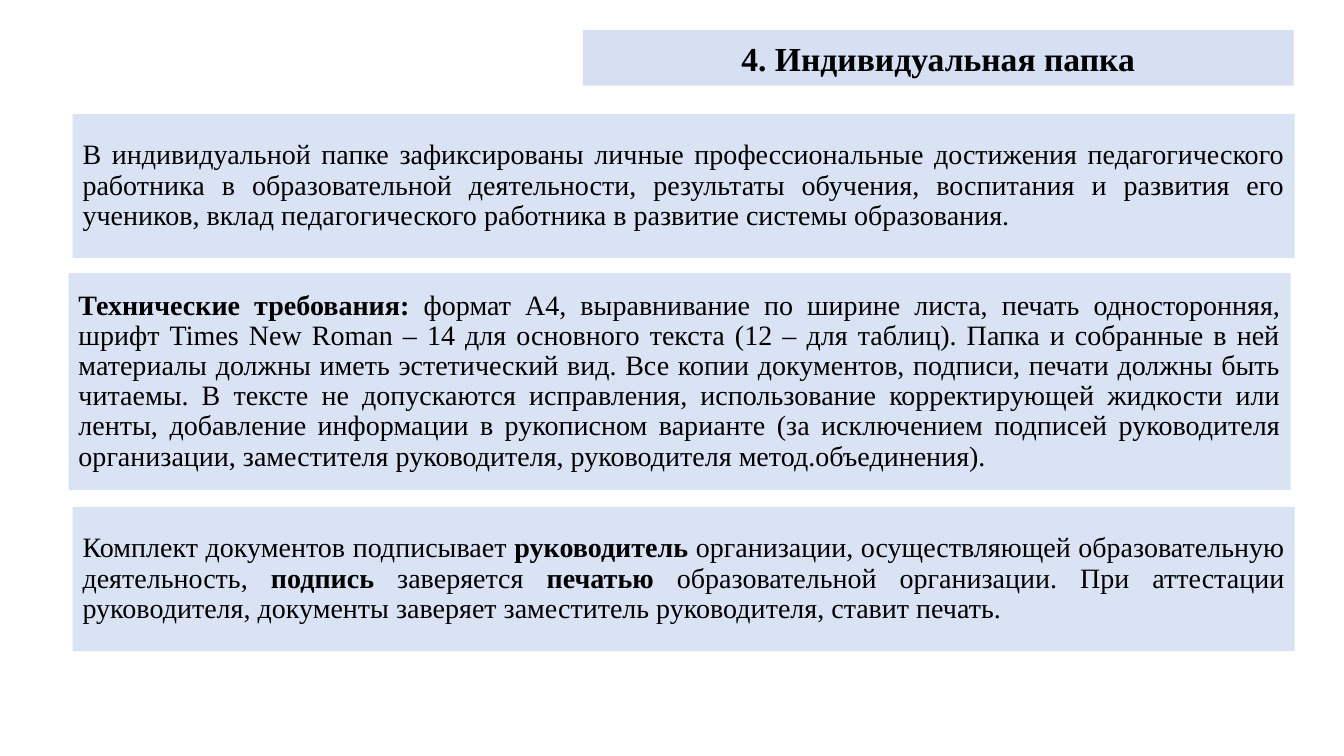
from lxml.etree import SubElement
from pptx import Presentation
from pptx.dml.color import RGBColor
from pptx.enum.shapes import MSO_SHAPE
from pptx.enum.text import MSO_ANCHOR, PP_ALIGN
from pptx.oxml.ns import qn
from pptx.util import Inches, Pt

# Content: runs are (text, bold)
TITLE = [("4. Индивидуальная папка", True)]
ABOUT = [
    ("В индивидуальной папке зафиксированы личные профессиональные достижения "
     "педагогического работника в образовательной деятельности, результаты обучения, "
     "воспитания и развития его учеников, вклад педагогического работника в развитие "
     "системы образования.", False),
]
REQUIREMENTS = [
    ("Технические требования: ", True),
    ("формат А4, выравнивание по ширине листа, печать односторонняя, шрифт "
     "Times New Roman – 14 для основного текста (12 – для таблиц). Папка и собранные "
     "в ней материалы должны иметь эстетический вид. Все копии документов, подписи, "
     "печати должны быть читаемы. В тексте не допускаются исправления, использование "
     "корректирующей жидкости или ленты, добавление информации в рукописном варианте "
     "(за исключением подписей руководителя организации, заместителя руководителя, "
     "руководителя метод.объединения).", False),
]
SIGNING = [
    ("Комплект документов подписывает ", False),
    ("руководитель", True),
    (" организации, осуществляющей образовательную деятельность, ", False),
    ("подпись", True),
    (" заверяется ", False),
    ("печатью ", True),
    ("образовательной организации. При аттестации руководителя, документы заверяет "
     "заместитель руководителя, ставит печать.", False),
]

# Text blocks: left, top, height, runs
BLOCK_WIDTH = 12.12
BLOCKS = [
    (0.72, 1.13, 1.43, ABOUT),
    (0.68, 2.71, 2.15, REQUIREMENTS),
    (0.72, 5.03, 1.43, SIGNING),
]


def color(value):
    return RGBColor.from_string(value)


def add_panel(s, box, runs, fill, size, align, spacing=None):
    sp = s.shapes.add_shape(MSO_SHAPE.RECTANGLE, *map(Inches, box))
    sp.shadow.inherit = False
    sp.fill.solid()
    sp.fill.fore_color.rgb = color(fill)
    sp.line.fill.background()
    tf = sp.text_frame
    tf.word_wrap = True
    tf.vertical_anchor = MSO_ANCHOR.MIDDLE
    p = tf.paragraphs[0]
    p.alignment = align
    p.line_spacing = spacing
    p.font.name = "Times New Roman"
    p.font.size = Pt(size)
    p.font.color.rgb = color("000000")
    for text, bold in runs:
        r = p.add_run()
        r.text = text
        r.font.bold = bold
    return sp


prs = Presentation()
prs.slide_width, prs.slide_height = Inches(13.33), Inches(7.5)
s = prs.slides.add_slide(prs.slide_layouts[6])

# Heading with a translucent fill
heading = add_panel(s, (5.78, 0.3, 7.05, 0.55), TITLE, "B4C7E7", 24, PP_ALIGN.CENTER)
fill_color = heading.fill._xPr.find(qn("a:solidFill"))[0]
SubElement(fill_color, qn("a:alpha"), val="54000")

# Text blocks
for left, top, height, runs in BLOCKS:
    add_panel(s, (left, top, BLOCK_WIDTH, height), runs, "DAE3F3", 20,
              PP_ALIGN.JUSTIFY, 0.9)

prs.save("out.pptx")
